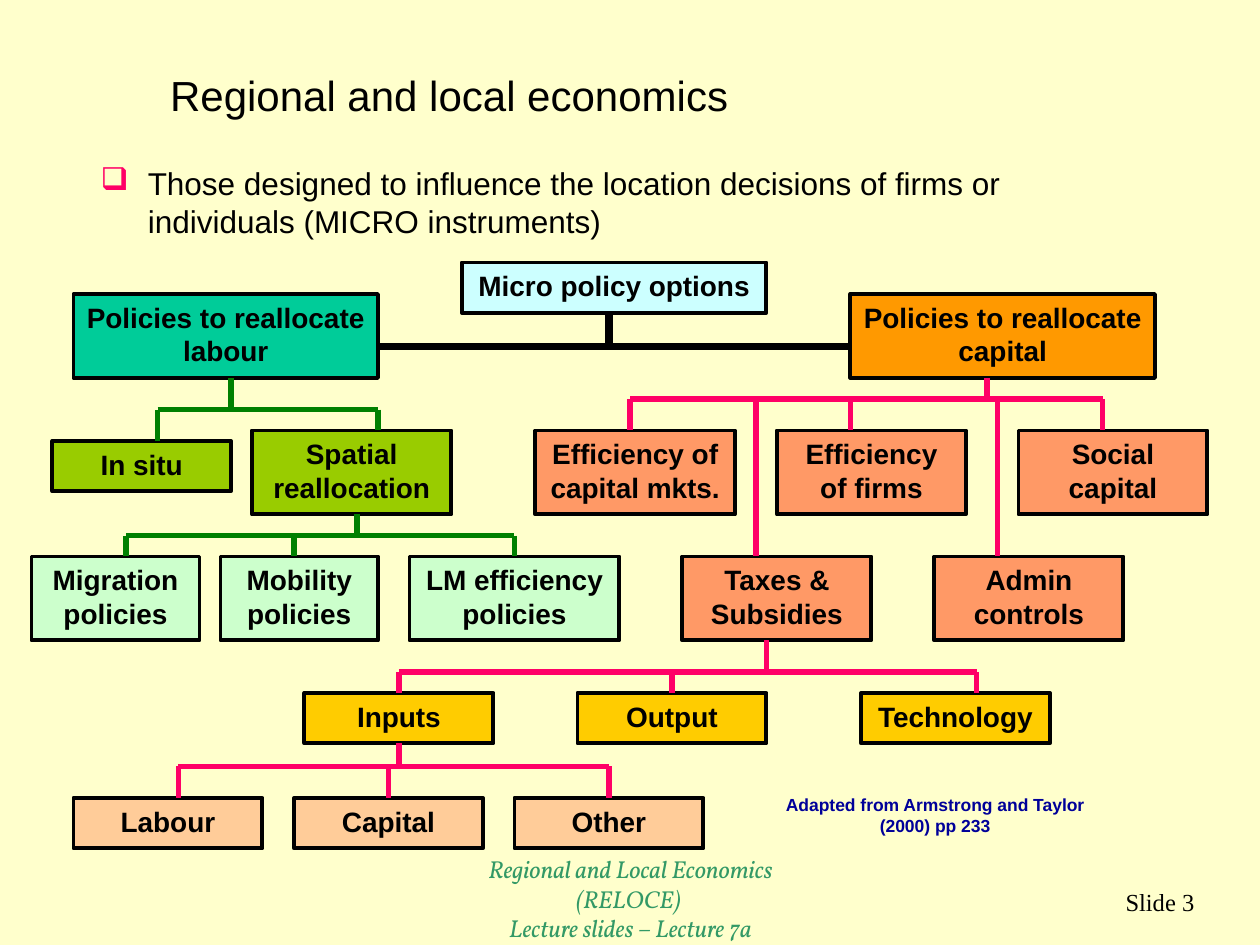
from lxml import etree
from pptx import Presentation
from pptx.dml.color import RGBColor
from pptx.enum.shapes import MSO_CONNECTOR, MSO_SHAPE
from pptx.enum.text import MSO_ANCHOR, PP_ALIGN
from pptx.oxml.ns import qn
from pptx.util import Cm, Pt

RECT, STRAIGHT = MSO_SHAPE.RECTANGLE, MSO_CONNECTOR.STRAIGHT
LEFT, CENTER, RIGHT = PP_ALIGN.LEFT, PP_ALIGN.CENTER, PP_ALIGN.RIGHT
TOP, MIDDLE = MSO_ANCHOR.TOP, MSO_ANCHOR.MIDDLE

COLOURS = {
    "background": "FFFFCC", "black": "000000", "navy": "000099",
    "sea": "339966", "green": "008000", "pink": "FF0066",
    "sky": "CCFFFF", "teal": "00CC99", "orange": "FF9900",
    "lime": "99CC00", "mint": "CCFFCC", "salmon": "FF9966",
    "gold": "FFCC00", "peach": "FFCC99",
}

# The chart sits on a grid of twelve steps to 2.54 cm.
STEP = 2.54 / 12
ONE_LINE, TWO_LINES = 4.8, 8

# fill, top, height, [(text, left, width)] in grid steps
LEVELS = [
    ("sky", 25, ONE_LINE, [("Micro policy options", 44, 29)]),
    ("teal", 28, TWO_LINES, [("Policies to reallocate labour", 7, 29)]),
    ("orange", 28, TWO_LINES, [("Policies to reallocate capital", 81, 29)]),
    ("lime", 42, ONE_LINE, [("In situ", 5, 17)]),
    ("lime", 41, TWO_LINES, [("Spatial reallocation", 24, 19)]),
    ("mint", 53, TWO_LINES, [("Migration policies", 3, 16),
                             ("Mobility policies", 21, 15),
                             ("LM efficiency policies", 39, 20)]),
    ("salmon", 41, TWO_LINES, [("Efficiency of capital mkts.", 51, 19),
                               ("Efficiency of firms", 74, 18),
                               ("Social capital", 97, 18)]),
    ("salmon", 53, TWO_LINES, [("Taxes & Subsidies", 65, 18),
                               ("Admin controls", 89, 18)]),
    ("gold", 66, ONE_LINE, [("Inputs", 29, 18), ("Output", 55, 18),
                            ("Technology", 82, 18)]),
    ("peach", 76, ONE_LINE, [("Labour", 7, 18), ("Capital", 28, 18),
                             ("Other", 49, 18)]),
]

# colour, points, stem (x, y), height of the bar, ends of the drops (x, y)
BRANCHES = [
    ("black", 4.5, (58, 30), 33, [(36, 33), (81, 33)]),
    ("green", 3, (22, 36), 39, [(15, 42), (36, 41)]),
    ("green", 3, (34, 49), 51, [(12, 53), (28, 53), (49, 53)]),
    ("pink", 3, (94, 36), 38,
     [(60, 41), (72, 53), (81, 41), (95, 53), (105, 41)]),
    ("pink", 3, (73, 61), 64, [(38, 66), (64, 66), (93, 66)]),
    ("pink", 3, (38, 71), 73, [(17, 76), (37, 76), (58, 76)]),
]

# lines, (left, top, width, height) in cm, wrap, anchor, alignment, font
TEXTS = {
    "title": (["Regional and local economics"], (3.18, 1.27, 12.32, 1.3),
              False, TOP, LEFT, {"name": "Arial", "size": Pt(24)}, "black"),
    "body": (["Those designed to influence the location decisions of firms "
              "or individuals (MICRO instruments)"],
             (1.78, 3.18, 21.59, 1.9),
             True, TOP, LEFT, {"name": "Arial", "size": Pt(18)}, "black"),
    "credit": (["Adapted from Armstrong and Taylor (2000) pp 233"],
               (15.47, 15.88, 6.76, 1.12), True, TOP, CENTER,
               {"name": "Arial", "size": Pt(10), "bold": True}, "navy"),
    "footer": (["Regional and Local Economics (RELOCE) ",
                "Lecture slides – Lecture 7a"],
               (8.69, 17.48, 8.05, 1.27), False, MIDDLE, CENTER,
               {"name": "Vollkorn", "size": Pt(14), "italic": True}, "sea"),
    "number": (["Slide 3"], (19.05, 17.55, 5.28, 1.27), False, MIDDLE, RIGHT,
               {"name": "Times New Roman", "size": Pt(14)}, "black"),
}
BOX_FONT = {"name": "Arial", "size": Pt(16), "bold": True}


def rgb(name):
    return RGBColor.from_string(COLOURS[name])


def grid(*steps):
    return [Cm(n * STEP) for n in steps]


def write(tf, lines, wrap, anchor, align, font, colour):
    tf.word_wrap, tf.vertical_anchor = wrap, anchor
    for i, line in enumerate(lines):
        p = tf.add_paragraph() if i else tf.paragraphs[0]
        p.alignment = align
        r = p.add_run()
        r.text = line
        for key, value in font.items():
            setattr(r.font, key, value)
        r.font.color.rgb = rgb(colour)


def add_bullet(p, char, colour):
    pPr = p._p.get_or_add_pPr()
    indent = Cm(0.95)
    pPr.set("marL", str(indent))
    pPr.set("indent", str(-indent))
    buClr = etree.SubElement(pPr, qn("a:buClr"))
    etree.SubElement(buClr, qn("a:srgbClr")).set("val", COLOURS[colour])
    etree.SubElement(pPr, qn("a:buChar")).set("char", char)


def add_box(s, text, left, top, width, height, fill):
    sp = s.shapes.add_shape(RECT, *grid(left, top, width, height))
    sp.shadow.inherit = False
    sp.fill.solid()
    sp.fill.fore_color.rgb = rgb(fill)
    sp.line.color.rgb = rgb("black")
    sp.line.width = Pt(2.25)
    write(sp.text_frame, [text], True, TOP, CENTER, BOX_FONT, "black")
    middle = left + width / 2
    return sp, {0: (middle, top), 2: (middle, top + height)}


def add_line(s, start, end, colour, points, boxes):
    """Draw a line and join each end that meets the middle of a box side."""
    c = s.shapes.add_connector(STRAIGHT, *grid(*start, *end))
    c.line.color.rgb = rgb(colour)
    c.line.width = Pt(points)
    etree.SubElement(c._element.spPr, qn("a:effectLst"))
    for (x, y), connect in ((start, c.begin_connect), (end, c.end_connect)):
        for sp, sites in boxes:
            for site, (sx, sy) in sites.items():
                if abs(x - sx) + abs(y - sy) < 0.25:
                    connect(sp, site)


def add_branch(s, colour, points, stem, bar, drops, boxes):
    xs = [x for x, _ in drops]
    lines = [((min(xs), bar), (max(xs), bar)), (stem, (stem[0], bar))]
    lines += [((x, bar), (x, y)) for x, y in drops if y != bar]
    for start, end in lines:
        add_line(s, start, end, colour, points, boxes)


def main():
    prs = Presentation()
    prs.slide_width, prs.slide_height = Cm(25.4), Cm(19.05)
    s = prs.slides.add_slide(prs.slide_layouts[6])
    s.background.fill.solid()
    s.background.fill.fore_color.rgb = rgb("background")

    for name, (lines, place, *style) in TEXTS.items():
        sp = s.shapes.add_textbox(*map(Cm, place))
        write(sp.text_frame, lines, *style)
        if name == "body":
            add_bullet(sp.text_frame.paragraphs[0], "❑", "pink")

    boxes = [add_box(s, text, left, top, width, height, fill)
             for fill, top, height, row in LEVELS
             for text, left, width in row]
    for branch in BRANCHES:
        add_branch(s, *branch, boxes)

    prs.save("out.pptx")


if __name__ == "__main__":
    main()
